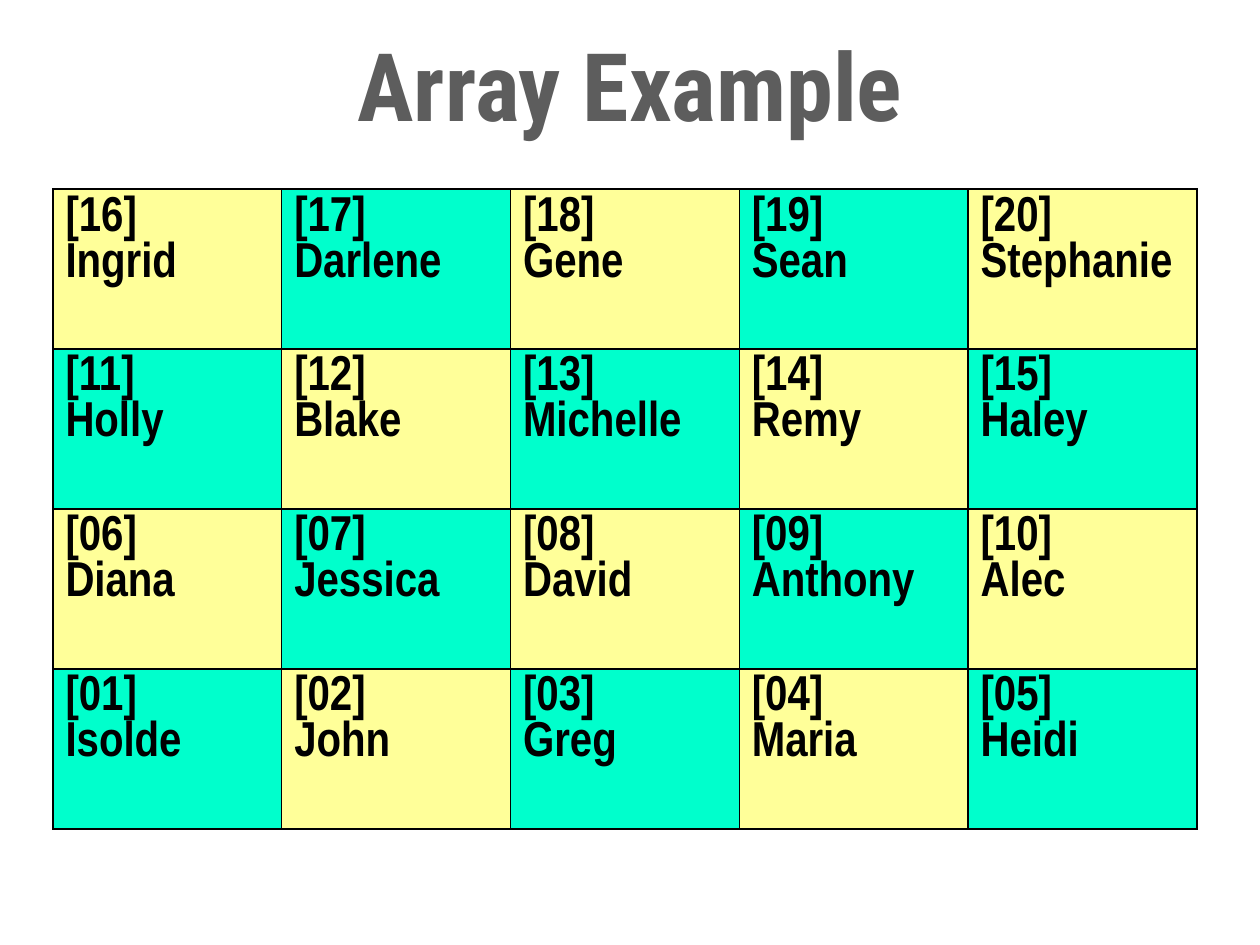
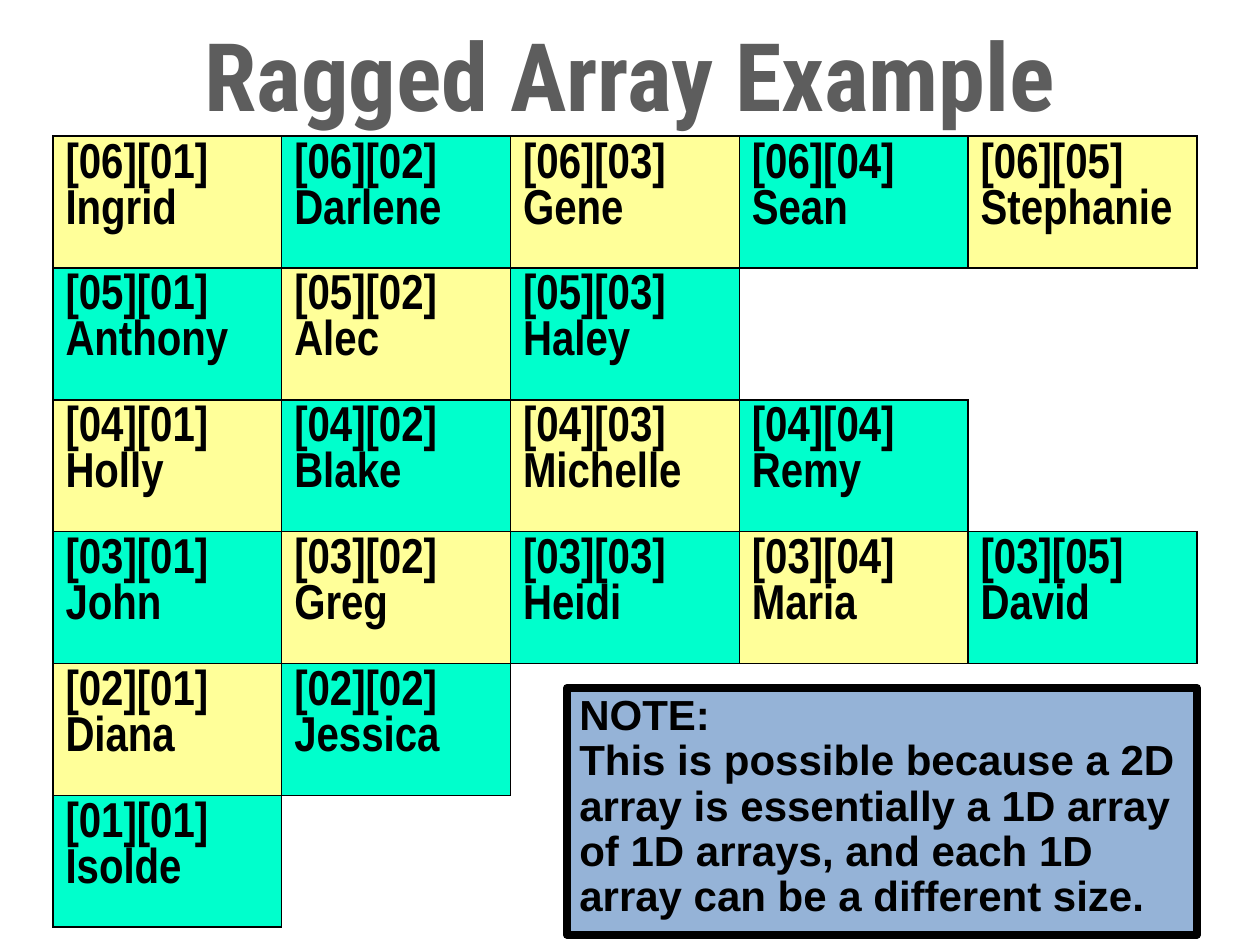
from lxml.etree import SubElement as Sub
from pptx import Presentation
from pptx.dml.color import RGBColor
from pptx.enum.shapes import MSO_SHAPE as Shape
from pptx.enum.text import MSO_ANCHOR as Anchor, MSO_AUTO_SIZE as Auto, PP_ALIGN as Align
from pptx.oxml.ns import qn
from pptx.util import Inches, Pt

YELLOW = RGBColor(0xFF, 0xFF, 0x99)
GREEN = RGBColor(0x00, 0xFF, 0xCC)
BLUE = RGBColor(0x95, 0xB3, 0xD7)
GREY = RGBColor(0x5D, 0x5D, 0x5D)
BLACK = RGBColor(0x00, 0x00, 0x00)

SIDES = {"L": (0, -1), "R": (0, 1), "T": (-1, 0), "B": (1, 0)}
COLS = 5

ARRAY = [
    ["Ingrid", "Darlene", "Gene", "Sean", "Stephanie"],
    ["Holly", "Blake", "Michelle", "Remy", "Haley"],
    ["Diana", "Jessica", "David", "Anthony", "Alec"],
    ["Isolde", "John", "Greg", "Maria", "Heidi"],
]
RAGGED = [
    ["Ingrid", "Darlene", "Gene", "Sean", "Stephanie"],
    ["Anthony", "Alec", "Haley"],
    ["Holly", "Blake", "Michelle", "Remy"],
    ["John", "Greg", "Heidi", "Maria", "David"],
    ["Diana", "Jessica"],
    ["Isolde"],
]
NOTE = [
    "NOTE:",
    "This is possible because a 2D array is essentially a 1D array of 1D arrays, "
    "and each 1D array can be a different size.",
]


def flat_label(row, col):
    return f"[{(row - 1) * COLS + col:02}]"


def pair_label(row, col):
    return f"[{row:02}][{col:02}]"


class Deck:
    def __init__(self):
        self.prs = Presentation()
        self.prs.slide_width = Inches(10)
        self.prs.slide_height = Inches(7.5)
        self.slide = None

    def text(self, frame, lines, font, size, color=BLACK, align=Align.LEFT, space=None):
        for i, line in enumerate(lines):
            para = frame.add_paragraph() if i else frame.paragraphs[0]
            para.alignment = align
            if space:
                para.line_spacing = space
            run = para.add_run()
            run.text = line
            run.font.name = font
            run.font.size = Pt(size)
            run.font.bold = True
            run.font.color.rgb = color

    def title(self, text, top):
        self.slide = self.prs.slides.add_slide(self.prs.slide_layouts[5])
        title = self.slide.shapes.title
        title.left, title.top = Inches(0), Inches(top)
        title.width, title.height = Inches(10), Inches(1.01)
        frame = title.text_frame
        frame.auto_size = Auto.NONE
        frame.vertical_anchor = Anchor.MIDDLE
        self.text(frame, [text], "Roboto Condensed", 54, GREY, Align.CENTER)

    def border(self, cell, side, shown):
        props = cell._tc.get_or_add_tcPr()
        line = Sub(props, qn(f"a:ln{side}"), w=str(Pt(1)))
        if shown:
            fill = Sub(line, qn("a:solidFill"))
            Sub(fill, qn("a:srgbClr"), val=str(BLACK))
        else:
            Sub(line, qn("a:noFill"))

    def grid(self, names, label, top, height):
        count = len(names)
        table = self.slide.shapes.add_table(
            count, COLS, Inches(0.42), Inches(top), Inches(9.08), Inches(height)
        ).table
        table.first_row = table.horz_banding = False

        def used(row, col):
            return 0 <= row < count and 0 <= col < len(names[row])

        for row in range(count):
            for col in range(COLS):
                cell = table.cell(row, col)
                for side, (down, right) in SIDES.items():
                    shown = used(row, col) or used(row + down, col + right)
                    self.border(cell, side, shown)
                if used(row, col):
                    cell.fill.solid()
                    cell.fill.fore_color.rgb = GREEN if (row + col) % 2 else YELLOW
                    lines = [label(count - row, col + 1), names[row][col]]
                    self.text(cell.text_frame, lines, "Arial Narrow", 28)
                else:
                    cell.fill.background()

    def note(self, lines, left, top, width, height):
        box = self.slide.shapes.add_shape(
            Shape.RECTANGLE, Inches(left), Inches(top), Inches(width), Inches(height)
        )
        box.shadow.inherit = False
        box.fill.solid()
        box.fill.fore_color.rgb = BLUE
        box.line.color.rgb = BLACK
        box.line.width = Pt(4.5)
        frame = box.text_frame
        frame.word_wrap = True
        frame.vertical_anchor = Anchor.TOP
        self.text(frame, lines, "Arial", 24, space=0.9)


def main():
    deck = Deck()
    deck.title("Array Example", 0.16)
    deck.grid(ARRAY, flat_label, 1.5, 5.08)
    deck.title("Ragged Array Example", 0.08)
    deck.grid(RAGGED, pair_label, 1.08, 6.28)
    deck.note(NOTE, 4.5, 5.46, 5, 1.96)
    deck.prs.save("out.pptx")


if __name__ == "__main__":
    main()
